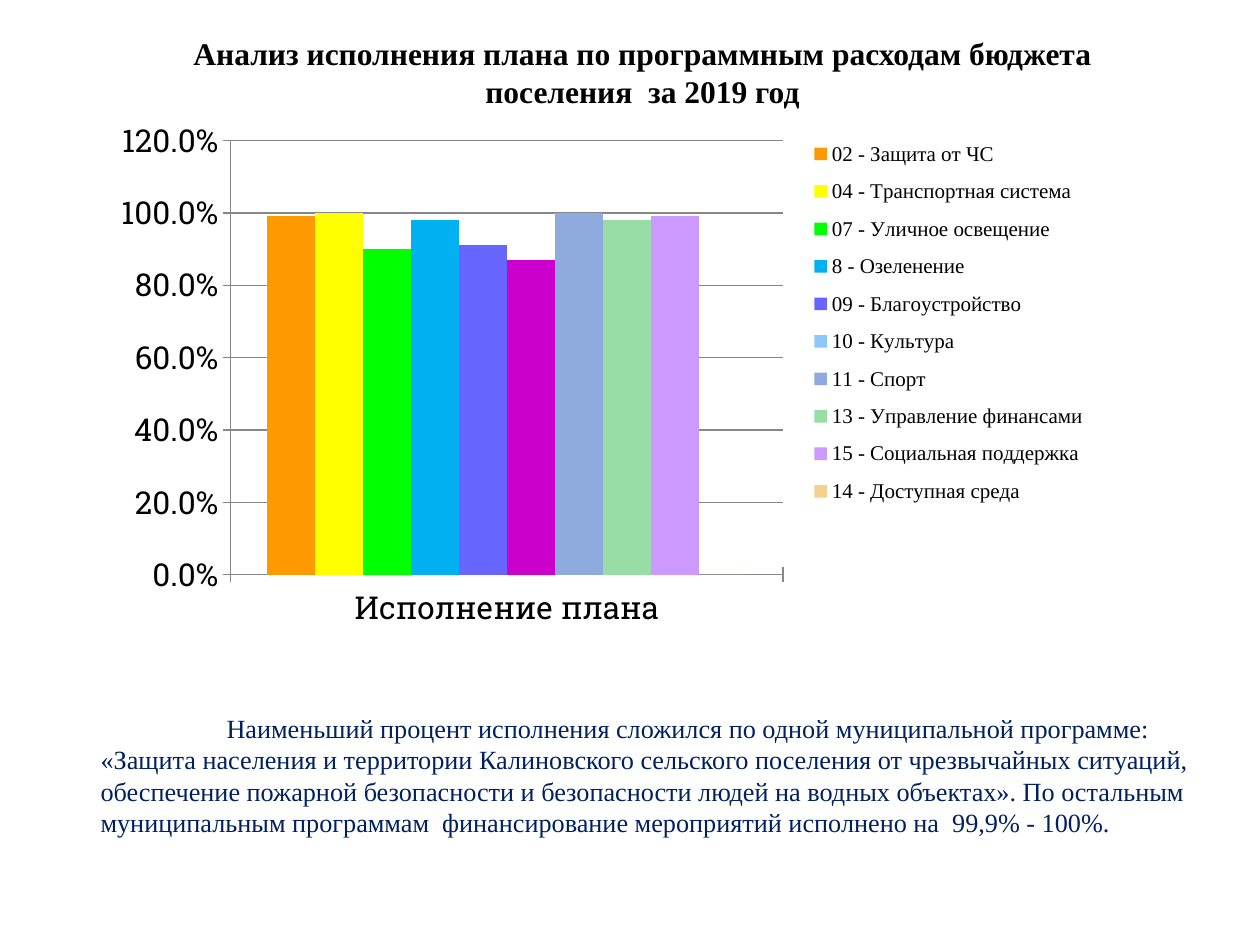
import pptx
import pptx.util
import pptx.chart.data
import pptx.dml.color
import pptx.enum.chart
import pptx.enum.text
import pptx.oxml
import pptx.oxml.ns
from dataclasses import dataclass


@dataclass(frozen=True)
class Theme:
    serif: str = "Times New Roman"
    slab: str = "Roboto Slab"
    ink: str = "000000"
    navy: str = "002060"
    grid: str = "878787"
    head: int = 18
    body: int = 15
    key: int = 12


THEME = Theme()
WIDE, HIGH = 10, 7.5

TITLE = "Анализ исполнения плана по программным расходам бюджета поселения  за 2019 год"
NOTE = (
    "Наименьший процент исполнения сложился по одной муниципальной программе: "
    "«Защита населения и территории Калиновского сельского поселения от "
    "чрезвычайных ситуаций, обеспечение пожарной безопасности и безопасности "
    "людей на водных объектах». По остальным муниципальным программам  "
    "финансирование мероприятий исполнено на  99,9% - 100%."
)
PLANS = [
    ("02 - Защита от ЧС", 0.99, "FF9900"),
    ("04 - Транспортная система", 1, "FFFF00"),
    ("07 - Уличное освещение", 0.9, "00FF00"),
    ("8 - Озеленение", 0.98, "00B0F0"),
    ("09 - Благоустройство", 0.91, "6666FF"),
    ("10 - Культура", 0.87, "8CC8FF"),
    ("11 - Спорт", 1, "8FAADC"),
    ("13 - Управление финансами", 0.98, "98DCA6"),
    ("15 - Социальная поддержка", 0.99, "CC99FF"),
    ("14 - Доступная среда", 0, "F5D08F"),
]
POINTS = {"10 - Культура": "CC00CC"}


def place(box):
    left, top, width, height = box
    shares = (left * WIDE, top * HIGH, width * WIDE, height * HIGH)
    return [pptx.util.Inches(share) for share in shares]


def paint(fill, tone):
    fill.solid()
    fill.fore_color.rgb = pptx.dml.color.RGBColor.from_string(tone)


def style(font, face, size, tone, bold=False):
    font.name = face
    font.size = pptx.util.Pt(size)
    font.bold = bold
    font.color.rgb = pptx.dml.color.RGBColor.from_string(tone)


def write(slide, box, text, size, tone, bold=False):
    frame = slide.shapes.add_textbox(*place(box)).text_frame
    frame.word_wrap = True
    para = frame.paragraphs[0]
    run = para.add_run()
    run.text = text
    style(run.font, THEME.serif, size, tone, bold)
    return frame, para


def add_title(slide, box):
    frame, para = write(slide, box, TITLE, THEME.head, THEME.ink, True)
    para.alignment = pptx.enum.text.PP_ALIGN.CENTER


def add_note(slide, box):
    frame, para = write(slide, box, NOTE, THEME.body, THEME.navy)
    frame.vertical_anchor = pptx.enum.text.MSO_ANCHOR.MIDDLE
    props = para._p.get_or_add_pPr()
    props.set("marL", "0")
    props.set("indent", str(pptx.util.Inches(WIDE / 10)))


def set_area(host, area, inner=False):
    target = '<c:layoutTarget val="inner"/>' if inner else ""
    modes = "".join(f'<c:{side}Mode val="edge"/>' for side in "xy")
    sizes = "".join(f'<c:{key} val="{val}"/>' for key, val in zip("xywh", area))
    names = pptx.oxml.ns.nsdecls("c")
    layout = pptx.oxml.parse_xml(
        f"<c:layout {names}><c:manualLayout>{target}{modes}{sizes}"
        "</c:manualLayout></c:layout>"
    )
    for old in host.findall(pptx.oxml.ns.qn("c:layout")):
        host.remove(old)
    return layout


def draw_axis(axis):
    axis.major_tick_mark = pptx.enum.chart.XL_TICK_MARK.CROSS
    axis.minor_tick_mark = pptx.enum.chart.XL_TICK_MARK.NONE
    paint(axis.format.line.fill, THEME.grid)
    style(axis.tick_labels.font, THEME.slab, THEME.head, THEME.ink)


def add_legend(chart, area):
    chart.has_legend = True
    legend = chart.legend
    legend.position = pptx.enum.chart.XL_LEGEND_POSITION.RIGHT
    legend.include_in_layout = False
    style(legend.font, THEME.serif, THEME.key, THEME.ink)
    node = legend._element
    layout = set_area(node, area)
    node.find(pptx.oxml.ns.qn("c:legendPos")).addnext(layout)


def add_bars(slide, box):
    data = pptx.chart.data.CategoryChartData(number_format="0.0%")
    data.categories = ["Исполнение плана"]
    for name, share, tone in PLANS:
        data.add_series(name, [share])
    kind = pptx.enum.chart.XL_CHART_TYPE.COLUMN_CLUSTERED
    chart = slide.shapes.add_chart(kind, *place(box), data).chart
    chart.has_title = False
    style(chart.font, THEME.slab, THEME.head, THEME.ink)

    plot = chart.plots[0]
    plot.vary_by_categories = False
    plot.gap_width = 150
    plot.overlap = 0
    for bars, (name, share, tone) in zip(plot.series, PLANS):
        bars.invert_if_negative = False
        paint(bars.format.fill, tone)
        if name in POINTS:
            paint(bars.points[0].format.fill, POINTS[name])

    draw_axis(chart.category_axis)
    axis = chart.value_axis
    draw_axis(axis)
    axis.minimum_scale, axis.maximum_scale, axis.major_unit = 0, 1.2, 0.2
    axis.has_major_gridlines = True
    paint(axis.major_gridlines.format.line.fill, THEME.grid)
    axis.tick_labels.number_format = "0.0%"
    axis.tick_labels.number_format_is_linked = False

    area = chart._chartSpace.chart.plotArea
    area.insert(0, set_area(area, (0.134, 0.043, 0.497, 0.767), True))
    add_legend(chart, (0.64, 0.02, 0.28, 0.69))


def main():
    deck = pptx.Presentation()
    deck.slide_width = pptx.util.Inches(WIDE)
    deck.slide_height = pptx.util.Inches(HIGH)
    slide = deck.slides.add_slide(deck.slide_layouts[6])
    add_title(slide, (0.13, 0.03, 0.76, 0.09))
    add_note(slide, (0.07, 0.7, 0.9, 0.24))
    add_bars(slide, (0.065, 0.123, 0.882, 0.599))
    deck.save("out.pptx")


if __name__ == "__main__":
    main()
